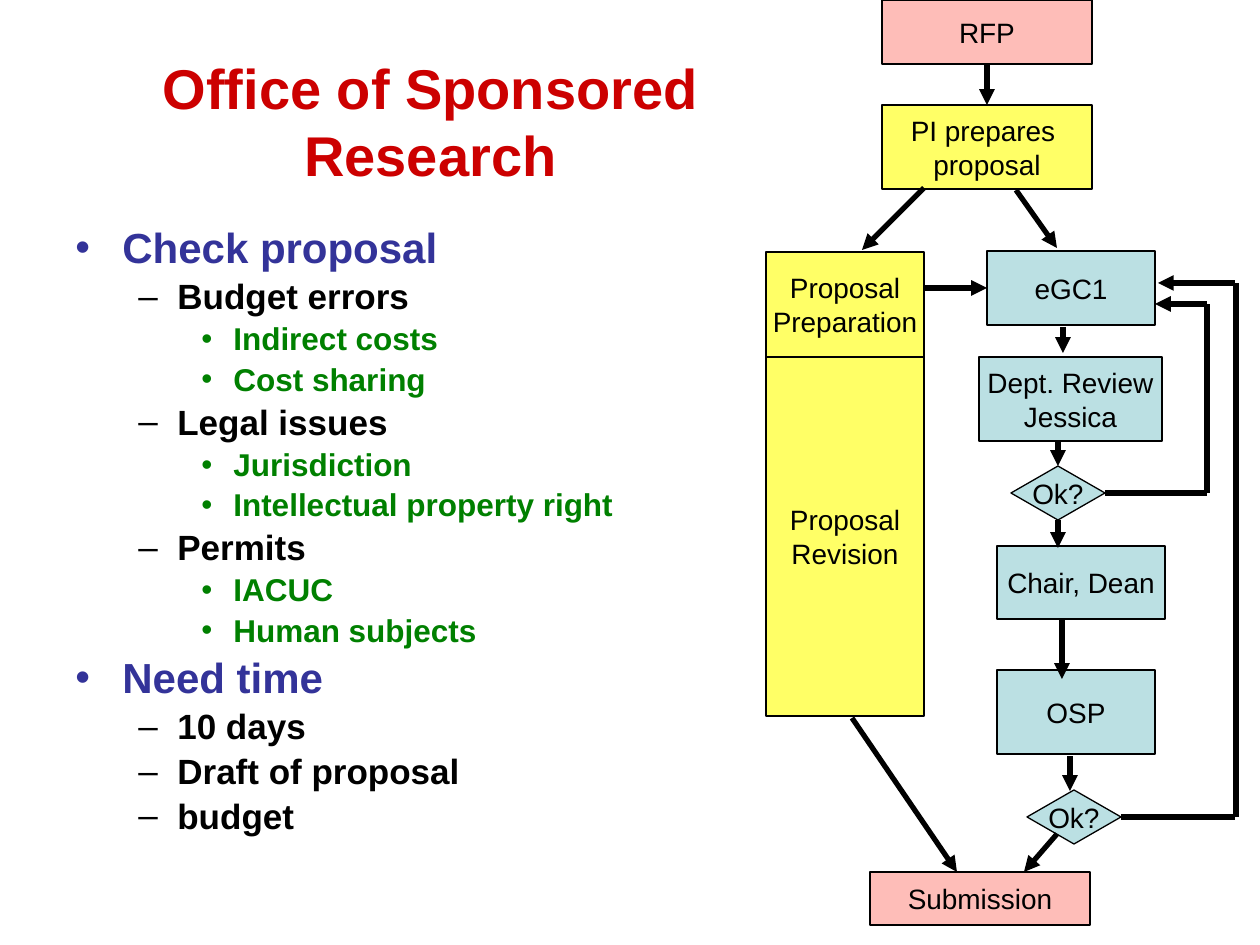
from lxml import etree
from pptx import Presentation
from pptx.dml.color import RGBColor
from pptx.enum.shapes import MSO_CONNECTOR, MSO_SHAPE
from pptx.enum.text import MSO_ANCHOR, PP_ALIGN
from pptx.oxml.ns import qn
from pptx.util import Emu, Pt

RECTANGLE, DIAMOND = MSO_SHAPE.RECTANGLE, MSO_SHAPE.DIAMOND
STRAIGHT = MSO_CONNECTOR.STRAIGHT
MIDDLE, CENTER = MSO_ANCHOR.MIDDLE, PP_ALIGN.CENTER
TOP, LEFT, BOTTOM, RIGHT = range(4)

COLORS = {
    "title": "CC0000", "heading": "333399", "detail": "008000", "black": "000000",
    "pink": "FEBDB8", "yellow": "FFFF66", "blue": "BBE0E3",
}


def px(*lengths):
    return [Emu(round(length * 914400 / 126)) for length in lengths]


def add_run(paragraph, text, size, color, bold=False):
    run = paragraph.add_run()
    run.text = text
    run.font.name = "Arial"
    run.font.size = Pt(size)
    run.font.bold = bold
    run.font.color.rgb = RGBColor.from_string(COLORS[color])


presentation = Presentation()
presentation.slide_width, presentation.slide_height = px(1260, 945)
slide = presentation.slides.add_slide(presentation.slide_layouts[6])

# Title
title_frame = slide.shapes.add_textbox(*px(63, 42, 735, 157)).text_frame
title_frame.word_wrap = True
title_frame.vertical_anchor = MIDDLE
title_frame.paragraphs[0].alignment = CENTER
add_run(title_frame.paragraphs[0], "Office of Sponsored Research", 32, "title", True)

# Bulleted outline: each level has a bullet, left margin, indent, size and colour
LEVELS = [
    ("•", 47, -47, 24, "heading"),
    ("–", 102, -39, 20, "black"),
    ("•", 158, -32, 18, "detail"),
]
OUTLINE = [
    (0, "Check proposal"),
    (1, "Budget errors"), (2, "Indirect costs"), (2, "Cost sharing"),
    (1, "Legal issues"), (2, "Jurisdiction"), (2, "Intellectual property right"),
    (1, "Permits"), (2, "IACUC"), (2, "Human subjects"),
    (0, "Need time"),
    (1, "10 days"), (1, "Draft of proposal"), (1, "budget"),
]
outline_frame = slide.shapes.add_textbox(*px(63, 221, 640, 683)).text_frame
outline_frame.word_wrap = True
for index, (level, text) in enumerate(OUTLINE):
    paragraph = outline_frame.add_paragraph() if index else outline_frame.paragraphs[0]
    bullet, margin, indent, size, color = LEVELS[level]
    paragraph.level = level
    properties = paragraph._p.get_or_add_pPr()
    for name, length in zip(("marL", "indent"), px(margin, indent)):
        properties.set(name, str(length))
    etree.SubElement(properties, qn("a:buFont"), typeface="Arial")
    etree.SubElement(properties, qn("a:buChar"), char=bullet)
    paragraph.line_spacing = 0.9
    paragraph.space_before = Pt(size * 0.2 if index else 0)
    add_run(paragraph, text, size, color, True)

# Flowchart steps: kind, left, top, width, height, fill, lines of text
STEPS = {
    "rfp": (RECTANGLE, 882, 0, 210, 64, "pink", ["RFP"]),
    "prepares": (RECTANGLE, 882, 105, 210, 84, "yellow", ["PI prepares ", "proposal"]),
    "preparation": (RECTANGLE, 766, 252, 158, 105, "yellow", ["Proposal", "Preparation"]),
    "revision": (RECTANGLE, 766, 357, 158, 359, "yellow", ["Proposal", "Revision"]),
    "egc1": (RECTANGLE, 987, 251, 168, 74, "blue", ["eGC1"]),
    "review": (RECTANGLE, 979, 357, 183, 84, "blue", ["Dept. Review", "Jessica"]),
    "review ok": (DIAMOND, 1011, 466, 94, 54, "blue", ["Ok?"]),
    "chair": (RECTANGLE, 997, 546, 168, 73, "blue", ["Chair, Dean"]),
    "osp": (RECTANGLE, 997, 670, 158, 84, "blue", ["OSP"]),
    "osp ok": (DIAMOND, 1027, 790, 94, 54, "blue", ["Ok?"]),
    "submission": (RECTANGLE, 870, 872, 220, 53, "pink", ["Submission"]),
}
steps = {}
for step, (kind, left, top, width, height, fill, lines) in STEPS.items():
    shape = slide.shapes.add_shape(kind, *px(left, top, width, height))
    shape.shadow.inherit = False
    shape.fill.solid()
    shape.fill.fore_color.rgb = RGBColor.from_string(COLORS[fill])
    shape.line.color.rgb = RGBColor.from_string(COLORS["black"])
    shape.line.width = Pt(0.75)
    frame = shape.text_frame
    frame.word_wrap = False
    frame.vertical_anchor = MIDDLE
    for index, text in enumerate(lines):
        paragraph = frame.add_paragraph() if index else frame.paragraphs[0]
        paragraph.alignment = CENTER
        add_run(paragraph, text, 16, "black")
    steps[step] = shape

# Connectors: start, end, arrowhead, joined start, joined end
CONNECTORS = [
    # Main flow
    ((987, 64), (987, 105), True, ("rfp", BOTTOM), ("prepares", TOP)),
    ((924, 188), (862, 250), True, None, None),
    ((1016, 190), (1057, 248), True, None, None),
    ((924, 288), (987, 288), True, None, ("egc1", LEFT)),
    ((1063, 327), (1063, 353), True, None, None),
    ((1058, 442), (1058, 466), True, None, ("review ok", TOP)),
    ((1058, 520), (1058, 548), True, ("review ok", BOTTOM), None),
    ((1062, 620), (1062, 679), True, None, None),
    ((1070, 756), (1070, 791), True, None, None),
    ((1057, 834), (1024, 872), True, None, None),
    ((852, 718), (957, 872), True, None, None),
    # Return from the department review
    ((1105, 493), (1207, 493), False, ("review ok", RIGHT), None),
    ((1207, 493), (1207, 304), False, None, None),
    ((1207, 304), (1155, 304), True, None, None),
    # Return from the OSP check
    ((1121, 817), (1235, 817), False, ("osp ok", RIGHT), None),
    ((1236, 817), (1236, 283), False, None, None),
    ((1235, 283), (1158, 283), True, None, None),
]
for start, end, arrow, joined_start, joined_end in CONNECTORS:
    connector = slide.shapes.add_connector(STRAIGHT, *px(*start, *end))
    connector.line.color.rgb = RGBColor.from_string(COLORS["black"])
    connector.line.width = Pt(3)
    shape_properties = connector.element.spPr
    if arrow:
        etree.SubElement(shape_properties.find(qn("a:ln")), qn("a:tailEnd"), type="triangle")
    etree.SubElement(shape_properties, qn("a:effectLst"))
    if joined_start:
        connector.begin_connect(steps[joined_start[0]], joined_start[1])
    if joined_end:
        connector.end_connect(steps[joined_end[0]], joined_end[1])

presentation.save("out.pptx")
